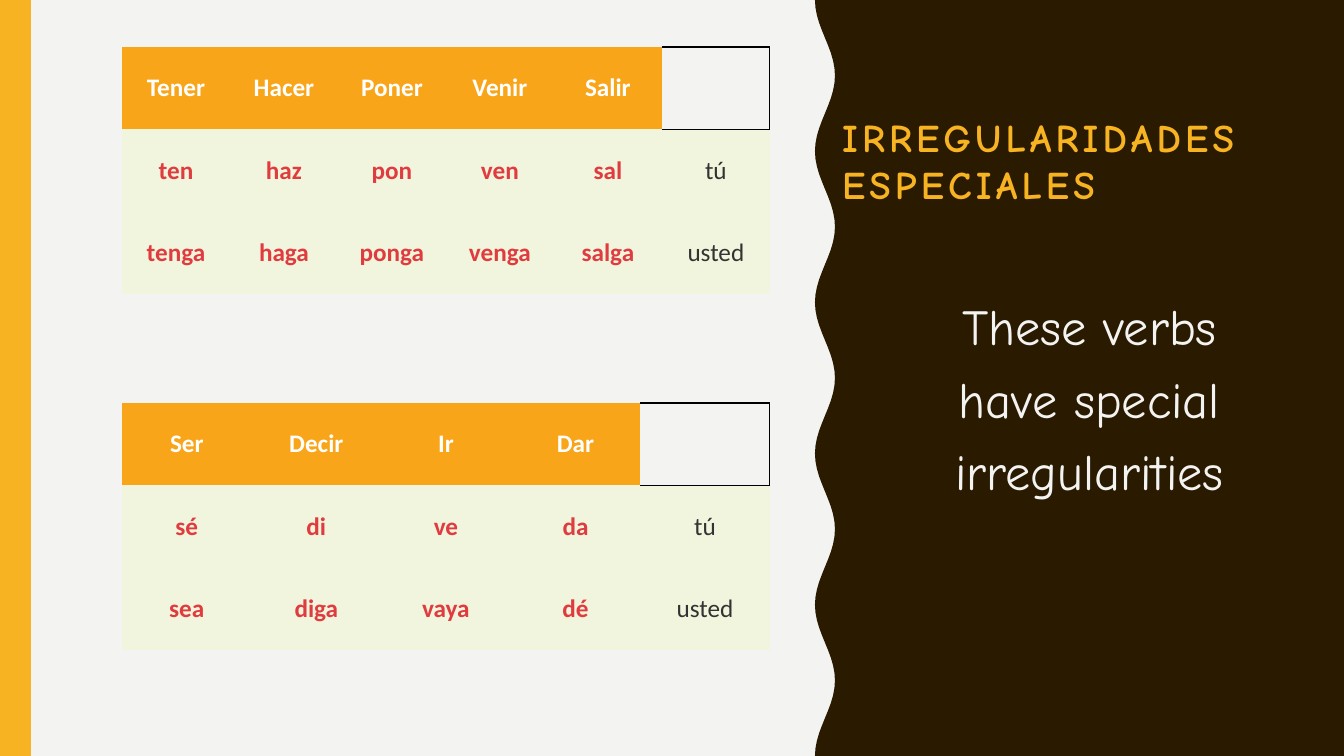
from math import cos, pi

from lxml.etree import SubElement
from pptx import Presentation
from pptx.dml.color import RGBColor
from pptx.enum.shapes import MSO_SHAPE
from pptx.enum.text import MSO_ANCHOR, MSO_AUTO_SIZE, PP_ALIGN
from pptx.oxml.ns import qn
from pptx.util import Pt

TITLE = "IRREGULARIDADES ESPECIALES"
BODY = "These verbs have special irregularities"
VERBS = [
    (47, [
        ["Tener", "Hacer", "Poner", "Venir", "Salir", ""],
        ["ten", "haz", "pon", "ven", "sal", "tú"],
        ["tenga", "haga", "ponga", "venga", "salga", "usted"],
    ]),
    (403, [
        ["Ser", "Decir", "Ir", "Dar", ""],
        ["sé", "di", "ve", "da", "tú"],
        ["sea", "diga", "vaya", "dé", "usted"],
    ]),
]

WIDE, HIGH = 1344, 756
LEFT, SPAN, TALL = 122, 648, 247
WAVES, STEPS = 5, 20
NO_STYLE = "{2D5ABB26-0587-4C30-8999-92F81FD0307C}"
GOLD, BROWN, PALE = "F8B323", "2A1A00", "F3F3F2"
ORANGE, GREEN, RED, GREY, WHITE = "F9A51A", "F1F5DD", "E03C3F", "333333", "FFFFFF"


def px(n):
    return round(n * 12192000 / WIDE)


def paint(fill, color):
    fill.solid()
    fill.fore_color.rgb = RGBColor.from_string(color)


def write(frame, text, size=18, font="Calibri", color=WHITE, bold=False,
          align=PP_ALIGN.CENTER, space=0):
    para = frame.paragraphs[0]
    para.alignment = align
    run = para.add_run()
    run.text = text
    run.font.size, run.font.name, run.font.bold = Pt(size), font, bold
    run.font.color.rgb = RGBColor.from_string(color)
    if space:
        run.font._element.set("spc", str(space * 100))
    return para


def place(shape, left, top, width, height, anchor):
    shape.left, shape.top = px(left), px(top)
    shape.width, shape.height = px(width), px(height)
    frame = shape.text_frame
    frame.word_wrap, frame.auto_size = True, MSO_AUTO_SIZE.NONE
    frame.vertical_anchor = anchor
    return frame


def back(shape, color, first):
    """Fill a plain shape and move it behind the given one."""
    paint(shape.fill, color)
    shape.line.fill.background()
    shape.shadow.inherit = False
    first.element.addprevious(shape.element)


def frame_cell(cell):
    """Leave the cell clear, with a black line on its open sides."""
    props = cell._tc.get_or_add_tcPr()
    for side in ("lnR", "lnT", "lnB"):
        line = SubElement(props, qn("a:" + side), w=str(Pt(1)))
        SubElement(SubElement(line, qn("a:solidFill")), qn("a:srgbClr"), val="000000")
    SubElement(props, qn("a:noFill"))


def add_verbs(shapes, top, rows):
    count = len(rows[0])
    table = shapes.add_table(len(rows), count, px(LEFT), px(top), px(SPAN), px(TALL)).table
    table.first_row = table.horz_banding = False
    table._tbl.tblPr.find(qn("a:tableStyleId")).text = NO_STYLE
    for r, row in enumerate(rows):
        for c, word in enumerate(row):
            cell = table.cell(r, c)
            cell.vertical_anchor = MSO_ANCHOR.MIDDLE
            cell.margin_left = cell.margin_right = px(6)
            cell.margin_top = cell.margin_bottom = px(3)
            if not word:
                frame_cell(cell)
                continue
            last = c == count - 1
            paint(cell.fill, GREEN if r else ORANGE)
            color = WHITE if r == 0 else GREY if last else RED
            write(cell.text_frame, word, color=color, bold=not last)


def main():
    deck = Presentation()
    deck.slide_width, deck.slide_height = px(WIDE), px(HIGH)
    slide = deck.slides.add_slide(deck.slide_layouts[2])
    paint(slide.background.fill, PALE)
    shapes = slide.shapes
    title, body = slide.placeholders

    total = WAVES * STEPS
    edge = [(px(825 - 10 * cos(2 * pi * i / STEPS)), px(HIGH * i / total))
            for i in range(total, -1, -1)]
    pen = shapes.build_freeform(px(815), 0)
    pen.add_line_segments([(px(WIDE), 0), (px(WIDE), px(HIGH))] + edge)
    back(pen.convert_to_shape(), BROWN, title)
    back(shapes.add_shape(MSO_SHAPE.RECTANGLE, 0, 0, px(31), px(HIGH)), GOLD, title)

    frame = place(title, 832, 7, 476, 252, MSO_ANCHOR.BOTTOM)
    frame.margin_bottom = px(52)
    write(frame, TITLE, size=28, font="Comic Neue", color=GOLD, bold=True,
          align=PP_ALIGN.LEFT, space=3)

    frame = place(body, 919, 278, 341, 373, MSO_ANCHOR.TOP)
    para = write(frame, BODY, size=36, font="Comic Neue", color=PALE)
    para.line_spacing, para.space_before = 1.2, Pt(12)

    for top, rows in VERBS:
        add_verbs(shapes, top, rows)
    deck.save("out.pptx")


if __name__ == "__main__":
    main()
